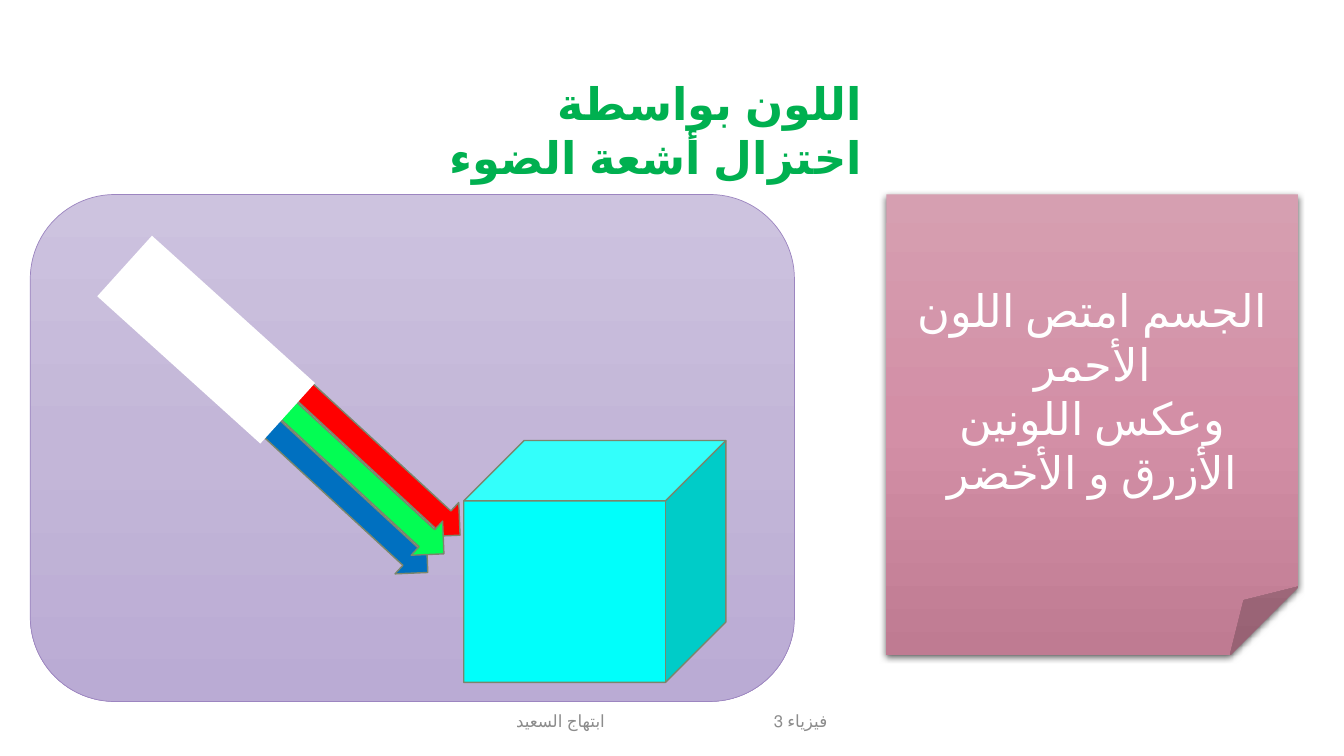
"""Slide on colour made by taking light rays away."""
from copy import deepcopy
from lxml import etree
from pptx import Presentation
from pptx.dml.color import RGBColor
from pptx.enum.lang import MSO_LANGUAGE_ID
from pptx.enum.shapes import MSO_SHAPE
from pptx.enum.text import MSO_ANCHOR, PP_ALIGN
from pptx.oxml.ns import qn
from pptx.util import Inches, Pt

ROUND, ARROW = MSO_SHAPE.ROUNDED_RECTANGLE, MSO_SHAPE.DOWN_ARROW
RECT, CUBE, NOTE = MSO_SHAPE.RECTANGLE, MSO_SHAPE.CUBE, MSO_SHAPE.FOLDED_CORNER
MIDDLE, TOP = MSO_ANCHOR.MIDDLE, MSO_ANCHOR.TOP
CENTER, RIGHT = PP_ALIGN.CENTER, PP_ALIGN.RIGHT
ARABIC = MSO_LANGUAGE_ID.ARABIC

COLORS = {
    "edge": "9C85C0", "rim": "7A866C", "white": "FFFFFF", "title": "00B050",
    "foot": "8C8C8C", "blue": "0070C0", "red": "FF0000", "green": "03FD53",
    "cyan": "00FFFB",
    "panel": ["CDC3DF", "C3B6D8", "BAABD4"],
    "note": ["D69FB1", "D38FA6", "BF7B92"],
}
TILT = 312.7


def draw(kind, box, fill, line=None, width=1, turn=0):
    shape = slide.shapes.add_shape(kind, *[Inches(n) for n in box])
    shape.shadow.inherit = False
    shape.rotation = turn
    tone = COLORS[fill]
    if isinstance(tone, list):
        shape.fill.gradient()
        shape.fill.gradient_angle = 270
        first = shape.fill._fill._gradFill.find(qn("a:gsLst"))[0]
        first.addnext(deepcopy(first))
        for stop, pos, code in zip(shape.fill.gradient_stops, (0, 0.5, 1), tone):
            stop.color.rgb = RGBColor.from_string(code)
            stop.position = pos
    else:
        shape.fill.solid()
        shape.fill.fore_color.rgb = RGBColor.from_string(tone)
    if line:
        shape.line.color.rgb = RGBColor.from_string(COLORS[line])
        shape.line.width = Pt(width)
    else:
        shape.line.fill.background()
    return shape


def write(shape, text, size, color, align=CENTER, anchor=MIDDLE, bold=False):
    frame = shape.text_frame
    frame.text = text
    frame.word_wrap = True
    frame.vertical_anchor = anchor
    for para in frame.paragraphs:
        para.alignment = align
        para._p.get_or_add_pPr().set("rtl", "1")
        for run in para.runs:
            run.font.language_id = ARABIC
            run.font.name = "Calibri"
            run.font.size = Pt(size)
            run.font.bold = bold
            run.font.color.rgb = RGBColor.from_string(COLORS[color])


deck = Presentation()
deck.slide_width, deck.slide_height = Inches(13.33), Inches(7.5)
slide = deck.slides.add_slide(deck.slide_layouts[6])

draw(ROUND, (0.3, 1.93, 7.58, 5.03), "panel", "edge", 0.5)

labels = [
    ("فيزياء 3", (6.94, 6.95, 2, 0.4), 12, "foot", CENTER, MIDDLE, False),
    ("ابتهاج السعيد", (4.56, 6.95, 2, 0.4), 12, "foot", CENTER, MIDDLE, False),
    ("اللون بواسطة اختزال أشعة الضوء", (3.85, 0.7, 4.8, 1.17),
     32, "title", RIGHT, TOP, True),
]
for text, box, *style in labels:
    write(slide.shapes.add_textbox(*[Inches(n) for n in box]), text, *style)

for color, step in (("blue", 0), ("red", 2), ("green", 1)):
    box = (3.19 + 0.16 * step, 3.8 - 0.185 * step, 0.46, 2.24)
    draw(ARROW, box, color, "rim", turn=TILT)

draw(RECT, (1.64, 2.28, 0.81, 2.18), "white", turn=312.1)
draw(CUBE, (4.6, 4.37, 2.6, 2.4), "cyan", "rim")

note = draw(NOTE, (8.79, 1.93, 4.09, 4.57), "note")
write(note, "الجسم امتص اللون\nالأحمر\nوعكس اللونين الأزرق و الأخضر", 32, "white")
glow = etree.SubElement(
    note._element.spPr.find(qn("a:effectLst")), qn("a:outerShdw"),
    blurRad=str(Pt(4.5)), dist=str(Pt(1.5)), dir="5400000", rotWithShape="0")
shade = etree.SubElement(glow, qn("a:srgbClr"), val="000000")
etree.SubElement(shade, qn("a:alpha"), val="63000")

deck.save("out.pptx")
